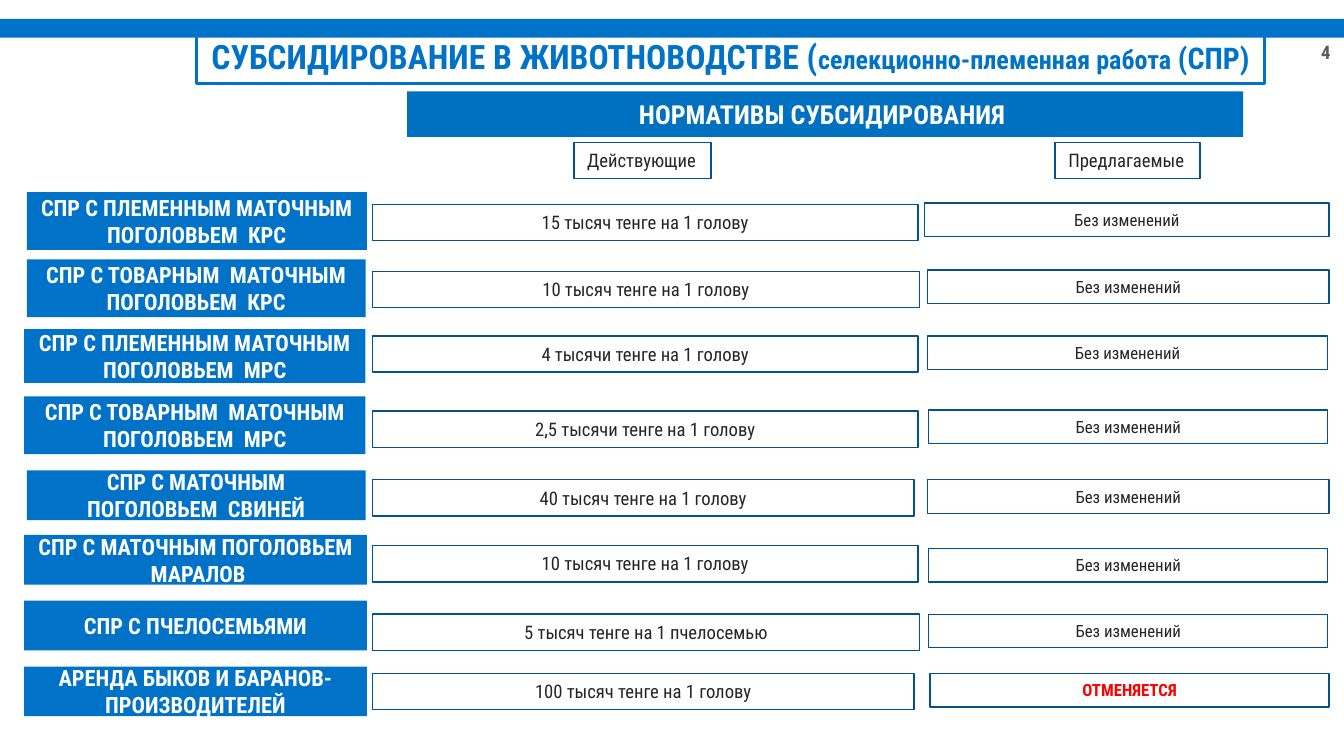
from pptx import Presentation
from pptx.dml.color import RGBColor
from pptx.enum.shapes import MSO_SHAPE
from pptx.enum.text import MSO_ANCHOR, MSO_AUTO_SIZE, PP_ALIGN
from pptx.util import Inches, Pt

RECT = MSO_SHAPE.RECTANGLE
TOP, MIDDLE = MSO_ANCHOR.TOP, MSO_ANCHOR.MIDDLE
LEFT, CENTER = PP_ALIGN.LEFT, PP_ALIGN.CENTER
GROW, FIXED = MSO_AUTO_SIZE.SHAPE_TO_FIT_TEXT, MSO_AUTO_SIZE.NONE

THEME = {
    "font": "Roboto Condensed",
    "blue": "0073C8", "band": "0070C0", "edge": "00518E",
    "ink": "262626", "gray": "5C5C5C", "white": "FFFFFF", "red": "FF0000",
    "title": 18, "topic": 14, "abbr": 16, "head": 14,
    "label": 12, "rate": 10, "plan": 9, "page": 10,
}

PAGE = "4"
TITLE = [
    ("СУБСИДИРОВАНИЕ В ЖИВОТНОВОДСТВЕ (", "title"),
    ("селекционно-племенная работа ", "topic"),
    ("(СПР)", "abbr"),
]
HEAD = "НОРМАТИВЫ СУБСИДИРОВАНИЯ "
COLUMNS = [("Действующие", 4.27, 1.02), ("Предлагаемые", 7.85, 1.08)]
SAME, ENDED = "Без изменений", "ОТМЕНЯЕТСЯ"

# Each cell: text, left, top, width; the label also has a height.
ROWS = [
    (("СПР С ПЛЕМЕННЫМ МАТОЧНЫМ ПОГОЛОВЬЕМ  КРС", 0.2, 1.43, 2.53, 0.43),
     ("15 тысяч тенге на 1 голову", 2.77, 1.52, 4.06), (SAME, 6.88, 1.51, 3.01)),
    (("СПР С ТОВАРНЫМ  МАТОЧНЫМ ПОГОЛОВЬЕМ  КРС", 0.2, 1.93, 2.52, 0.43),
     ("10 тысяч тенге на 1 голову", 2.77, 2.02, 4.07), (SAME, 6.9, 2.01, 2.99)),
    (("СПР С ПЛЕМЕННЫМ МАТОЧНЫМ ПОГОЛОВЬЕМ  МРС", 0.18, 2.45, 2.54, 0.4),
     ("4 тысячи тенге на 1 голову", 2.77, 2.5, 4.06), (SAME, 6.9, 2.5, 2.98)),
    (("СПР С ТОВАРНЫМ  МАТОЧНЫМ ПОГОЛОВЬЕМ  МРС", 0.18, 2.95, 2.54, 0.43),
     ("2,5 тысячи тенге на 1 голову", 2.77, 3.06, 4.06), (SAME, 6.91, 3.05, 2.97)),
    (("СПР С МАТОЧНЫМ ПОГОЛОВЬЕМ  СВИНЕЙ", 0.2, 3.5, 2.52, 0.37),
     ("40 тысяч тенге на 1 голову", 2.77, 3.57, 4.03), (SAME, 6.9, 3.57, 2.99)),
    (("СПР С МАТОЧНЫМ ПОГОЛОВЬЕМ  МАРАЛОВ", 0.18, 3.98, 2.55, 0.37),
     ("10 тысяч тенге на 1 голову", 2.77, 4.06, 4.06), (SAME, 6.91, 4.08, 2.97)),
    (("СПР С ПЧЕЛОСЕМЬЯМИ", 0.18, 4.47, 2.55, 0.37),
     ("5 тысяч тенге на 1 пчелосемью", 2.77, 4.57, 4.07), (SAME, 6.91, 4.57, 2.97)),
    (("АРЕНДА БЫКОВ И БАРАНОВ-ПРОИЗВОДИТЕЛЕЙ", 0.18, 4.96, 2.55, 0.37),
     ("100 тысяч тенге на 1 голову", 2.77, 5.01, 4.03), (ENDED, 6.92, 5.01, 2.97)),
]
RATE_H, PLAN_H = 0.27, 0.25


def color(name):
    return RGBColor.from_string(THEME[name])


def add_box(slide, place, fill=None, line=None, weight=0.75):
    box = slide.shapes.add_shape(RECT, *map(Inches, place))
    box.shadow.inherit = False
    if fill:
        box.fill.solid()
        box.fill.fore_color.rgb = color(fill)
    else:
        box.fill.background()
    if line:
        box.line.color.rgb = color(line)
        box.line.width = Pt(weight)
    else:
        box.line.fill.background()
    return box


def write(box, parts, ink, bold=False, anchor=TOP, fit=GROW, wrap=True,
          align=CENTER):
    """Fill a box with one paragraph of (text, size name) parts."""
    frame = box.text_frame
    frame.word_wrap = wrap
    frame.auto_size = fit
    frame.vertical_anchor = anchor
    para = frame.paragraphs[0]
    para.alignment = align
    for text, size in parts:
        run = para.add_run()
        run.text = text
        run.font.name = THEME["font"]
        run.font.size = Pt(THEME[size])
        run.font.bold = bold
        run.font.color.rgb = color(ink)


def add_row(slide, label, rate, plan):
    text, *place = label
    box = add_box(slide, place, fill="blue")
    write(box, [(text, "label")], "white", True, MIDDLE, FIXED)

    text, *place = rate
    box = add_box(slide, (*place, RATE_H), line="edge")
    write(box, [(text, "rate")], "ink")

    text, *place = plan
    ended = text == ENDED
    box = add_box(slide, (*place, PLAN_H), line="edge")
    write(box, [(text, "plan")], "red" if ended else "ink", ended)


def main():
    deck = Presentation()
    deck.slide_width = Inches(10)
    deck.slide_height = Inches(10) * 9 // 16
    slide = deck.slides.add_slide(deck.slide_layouts[6])

    page = slide.shapes.add_textbox(*map(Inches, (9.69, 0.21, 0.35, 0.36)))
    write(page, [(PAGE, "page")], "gray", True, MIDDLE, FIXED)
    add_box(slide, (0, 0.14, 10, 0.14), fill="blue")

    title = add_box(slide, (1.46, 0.22, 7.95, 0.4), line="blue", weight=1.5)
    write(title, TITLE, "blue", True)
    head = add_box(slide, (3.03, 0.68, 6.22, 0.34), fill="band")
    write(head, [(HEAD, "head")], "white", True)
    for text, left, width in COLUMNS:
        box = add_box(slide, (left, 1.06, width, RATE_H), line="edge")
        write(box, [(text, "rate")], "ink", wrap=False, align=LEFT)

    for row in ROWS:
        add_row(slide, *row)
    deck.save("out.pptx")


if __name__ == "__main__":
    main()
